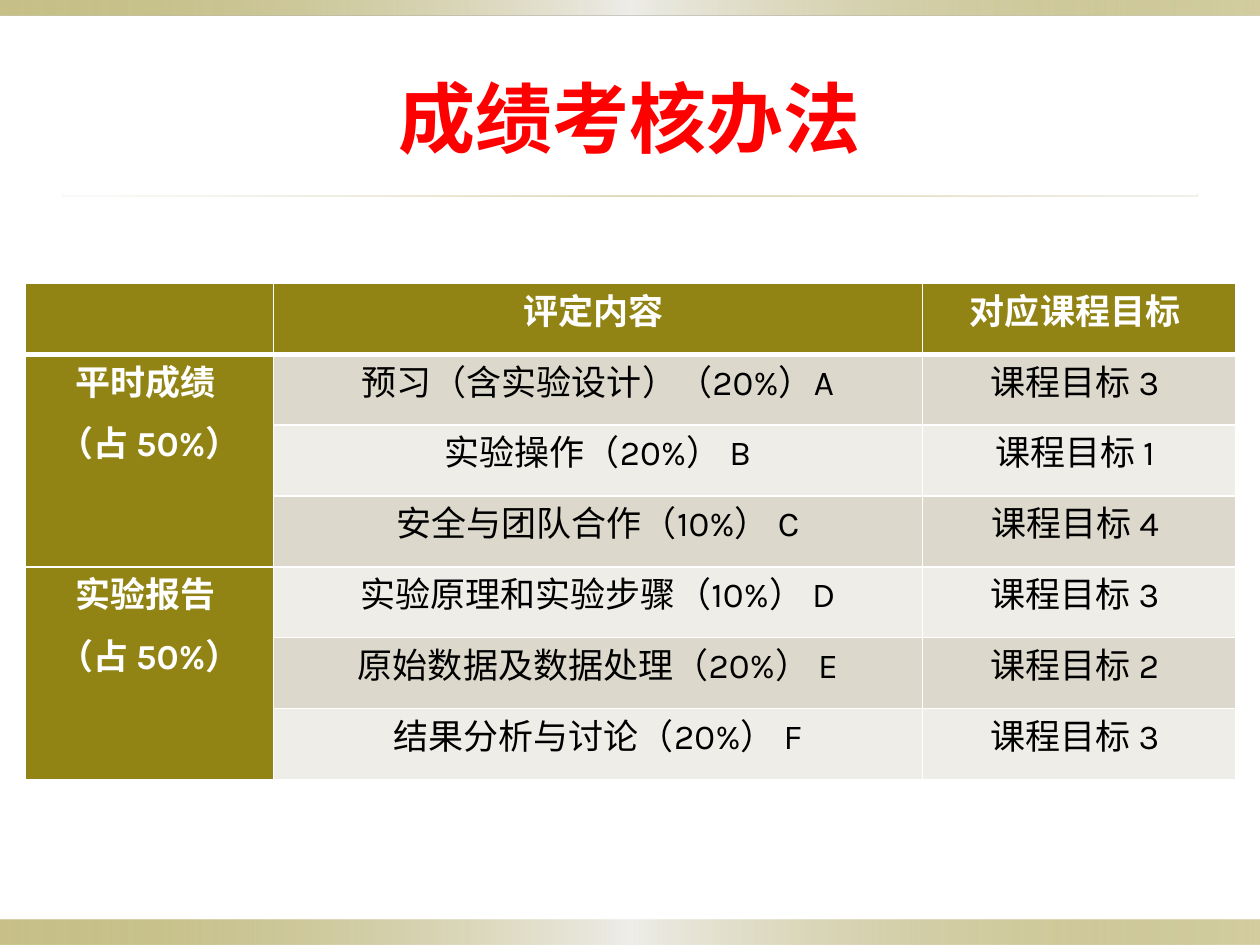
import pptx
import pptx.util
import pptx.dml.color
import pptx.enum.shapes
import pptx.enum.text
import pptx.oxml
import pptx.oxml.ns

In, Pt = pptx.util.Inches, pptx.util.Pt
CENTER = pptx.enum.text.PP_ALIGN.CENTER
RECT = pptx.enum.shapes.MSO_SHAPE.RECTANGLE
NS = pptx.oxml.ns.nsdecls("a")

W, H = 10, 7.5
FONT = "Karla"
COLORS = {"olive": "918415", "sand": "DCD9CC", "pale": "EEEDE8",
          "white": "FFFFFF", "black": "000000", "red": "FF0000"}

TITLE = "成绩考核办法"
HEADER = ["", "评定内容 ", "对应课程目标 "]
GROUPS = [
    (["平时成绩 ", "（占 50%）"], [
        ("预习（含实验设计）（20%）A", "课程目标 3 "),
        ("实验操作（20%） B", "课程目标 1 "),
        ("安全与团队合作（10%） C", "课程目标 4 ")]),
    (["实验报告 ", "（占 50%）"], [
        ("实验原理和实验步骤（10%） D", "课程目标 3 "),
        ("原始数据及数据处理（20%） E", "课程目标 2 "),
        ("结果分析与讨论（20%） F", "课程目标 3 ")]),
]
COL_WIDTHS = [1.97, 5.15, 2.49]
ROW_HEIGHT = 0.5625
BAND = [(0, "olive", 50), (50, "pale", 100), (100, "olive", 40)]
RULE = [(0, "sand", 20), (50, "olive", 40), (100, "sand", 50)]
BARS = [((0, H - 0.2, W, 0.2), BAND),
        ((0, 0, W, 0.12), BAND),
        ((W * 0.05, 1.54, W * 0.9, 0.02), RULE)]


def rgb(name):
    return pptx.dml.color.RGBColor.from_string(COLORS[name])


def style(p, size, color, bold):
    p.alignment = CENTER
    p.font.name, p.font.size, p.font.bold = FONT, Pt(size), bold
    p.font.color.rgb = rgb(color)


def add_bar(s, box, stops):
    sp = s.shapes.add_shape(RECT, *map(In, box))
    sp.shadow.inherit = False
    sp.line.fill.background()
    gs = "".join(
        f'<a:gs pos="{pos * 1000}"><a:srgbClr val="{COLORS[color]}">'
        f'<a:alpha val="{alpha * 1000}"/></a:srgbClr></a:gs>'
        for pos, color, alpha in stops)
    sp._element.spPr.find(pptx.oxml.ns.qn("a:prstGeom")).addnext(pptx.oxml.parse_xml(
        f'<a:gradFill {NS} rotWithShape="1"><a:gsLst>{gs}</a:gsLst>'
        '<a:lin ang="0" scaled="0"/></a:gradFill>'))


def add_title(s):
    sp = s.shapes.add_textbox(In(W * 0.05), In(0.3), In(W * 0.9), In(1.25))
    sp.fill.solid()
    sp.fill.fore_color.rgb = rgb("white")
    tf = sp.text_frame
    tf.word_wrap = True
    tf.vertical_anchor = pptx.enum.text.MSO_ANCHOR.MIDDLE
    tf.text = TITLE
    style(tf.paragraphs[0], 44, "red", True)


def fill_cell(cell, row, lines, fill, color, bold):
    tcPr = cell._tc.get_or_add_tcPr()
    widths = {"L": 1, "R": 1, "T": 3 if row == 1 else 1, "B": 3 if row == 0 else 1}
    for side, width in widths.items():
        tcPr.append(pptx.oxml.parse_xml(
            f'<a:ln{side} {NS} w="{Pt(width)}"><a:solidFill>'
            f'<a:srgbClr val="{COLORS["white"]}"/></a:solidFill></a:ln{side}>'))
    cell.fill.solid()
    cell.fill.fore_color.rgb = rgb(fill)
    cell.margin_left = cell.margin_right = In(0.07)
    cell.margin_top = cell.margin_bottom = 0
    cell.text_frame.text = "\n".join(lines)
    for p in cell.text_frame.paragraphs:
        style(p, 20, color, bold)
    for p in cell.text_frame.paragraphs[:-1]:
        p.space_after = Pt(6.2)


def add_grades(s):
    n = 1 + sum(len(items) for _, items in GROUPS)
    table = s.shapes.add_table(n, len(COL_WIDTHS), In(0.2), In(2.25),
                               In(sum(COL_WIDTHS)), In(n * ROW_HEIGHT)).table
    table.horz_banding = False
    for col, width in zip(table.columns, COL_WIDTHS):
        col.width = In(width)
    for c, text in enumerate(HEADER):
        fill_cell(table.cell(0, c), 0, [text], "olive", "white", True)
    row = 1
    for label, items in GROUPS:
        first = row
        for item in items:
            fill_cell(table.cell(row, 0), row, label if row == first else [""],
                      "olive", "white", True)
            for c, text in enumerate(item, 1):
                fill_cell(table.cell(row, c), row, [text],
                          "sand" if row % 2 else "pale", "black", False)
            row += 1
        table.cell(first, 0).merge(table.cell(row - 1, 0))


def main():
    prs = pptx.Presentation()
    prs.slide_width, prs.slide_height = In(W), In(H)
    s = prs.slides.add_slide(prs.slide_layouts[6])
    for box, stops in BARS:
        add_bar(s, box, stops)
    add_title(s)
    add_grades(s)
    prs.save("out.pptx")


if __name__ == "__main__":
    main()
